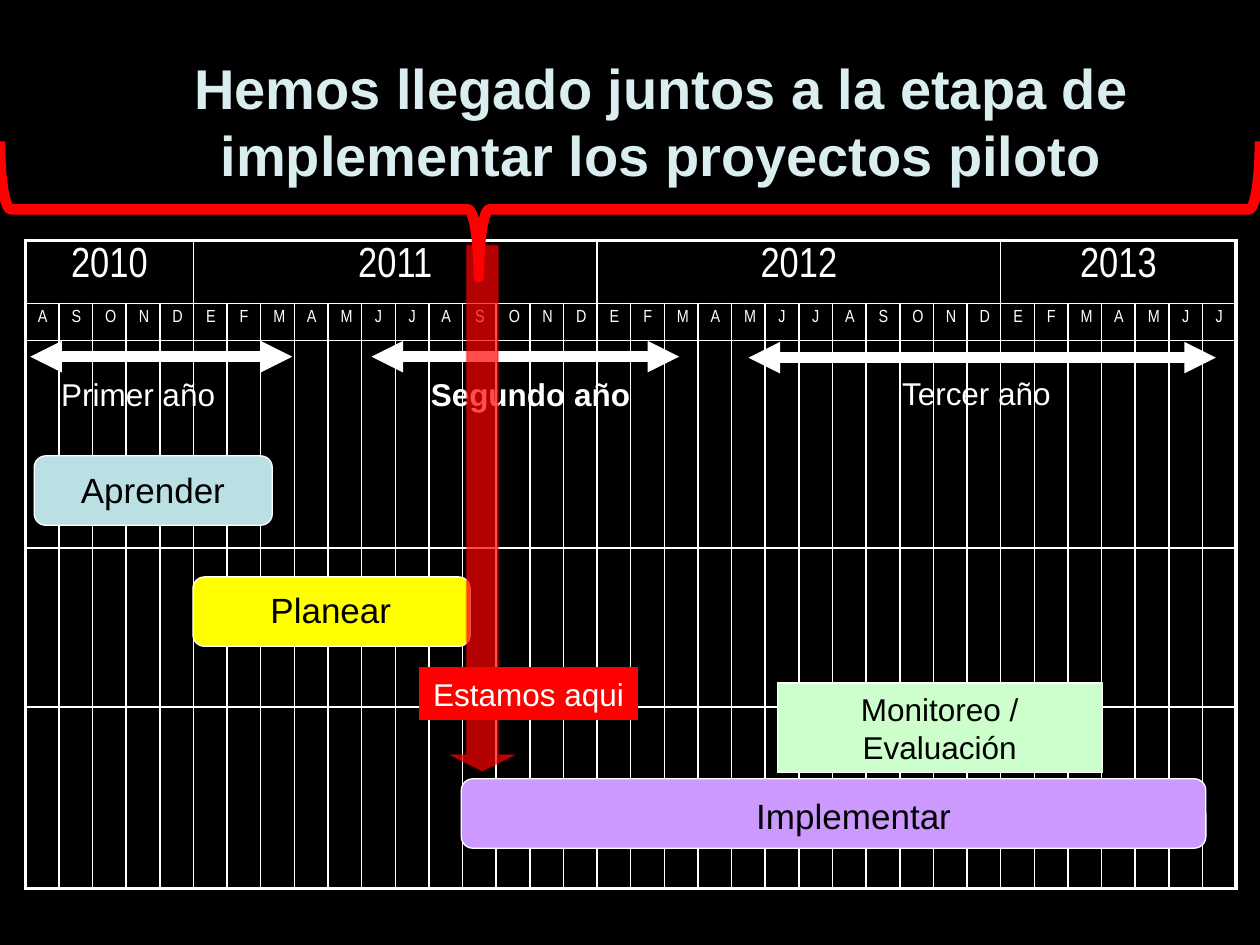
from lxml.etree import SubElement
from pptx import Presentation
from pptx.dml.color import RGBColor
from pptx.enum.shapes import MSO_CONNECTOR, MSO_SHAPE as SHAPE
from pptx.enum.text import MSO_ANCHOR as ANCHOR, PP_ALIGN
from pptx.oxml.ns import qn
from pptx.util import Cm, Pt

BLACK, WHITE, RED = "000000", "FFFFFF", "FF0000"
TITLE = "Hemos llegado juntos a la etapa de implementar los proyectos piloto"

# year, initials of the months it covers
YEARS = [
    ("2010", "ASOND"),
    ("2011", "EFMAMJJASOND"),
    ("2012", "EFMAMJJASOND"),
    ("2013", "EFMAMJJ"),
]
TABLE_LEFT, TABLE_TOP, TABLE_WIDTH = 0.51, 4.85, 24.43
ROW_HEIGHTS = [1.27, 0.74, 4.19, 3.2, 3.66]

# name, fill, bar (left, top, width), label (left, top, width)
STAGES = [
    ("Aprender", "BBE0E3", (0.69, 9.19, 4.8), (0.99, 9.32, 4.19)),
    ("Planear", "FFFF00", (3.89, 11.63, 5.59), (4.17, 11.73, 5)),
    ("Implementar", "CC99FF", (9.3, 15.7, 15.01), (9.91, 15.9, 14.6)),
]
# name, bold, arrow (start, end, height on the slide), label (left, top, width)
PHASES = [
    ("Segundo año", True, (7.49, 13.69, 7.19), (7.7, 7.44, 5.99)),
    ("Tercer año", False, (15.09, 24.51, 7.21), (16.69, 7.42, 5.99)),
    ("Primer año", False, (0.61, 5.89, 7.19), (0.69, 7.44, 4.19)),
]


def rgb(color):
    return RGBColor.from_string(color)


def write(tf, text, size, color, bold=False, font="Arial"):
    tf.word_wrap = True
    p = tf.paragraphs[0]
    p.alignment = PP_ALIGN.CENTER
    r = p.add_run()
    r.text = text
    r.font.size, r.font.bold, r.font.name = Pt(size), bold, font
    r.font.color.rgb = rgb(color)


def add_label(slide, text, left, top, width, height, size, color,
              bold=False, anchor=ANCHOR.TOP):
    sp = slide.shapes.add_textbox(Cm(left), Cm(top), Cm(width), Cm(height))
    write(sp.text_frame, text, size, color, bold)
    sp.text_frame.vertical_anchor = anchor
    return sp


def add_block(slide, kind, box, fill=None, line=WHITE, weight=0.75, adjust=()):
    sp = slide.shapes.add_shape(kind, *map(Cm, box))
    sp.shadow.inherit = False
    if fill:
        sp.fill.solid()
        sp.fill.fore_color.rgb = rgb(fill)
    else:
        sp.fill.background()
    sp.line.color.rgb = rgb(line)
    sp.line.width = Pt(weight)
    for i, value in enumerate(adjust):
        sp.adjustments[i] = value
    return sp


def set_alpha(color_format_parent, percent):
    """Make the solid colour found under the element partly transparent."""
    color = color_format_parent.find(qn("a:solidFill")).find(qn("a:srgbClr"))
    SubElement(color, qn("a:alpha"), val=str(percent * 1000))


def add_double_arrow(slide, start, end, y):
    s = slide.shapes.add_connector(
        MSO_CONNECTOR.STRAIGHT, Cm(start), Cm(y), Cm(end), Cm(y))
    s.line.color.rgb = rgb(WHITE)
    s.line.width = Pt(6)
    ln = s.line._get_or_add_ln()
    for tag in ("a:headEnd", "a:tailEnd"):
        SubElement(ln, qn(tag), type="triangle")
    SubElement(s._element.spPr, qn("a:effectLst"))


def set_borders(cell, **weights):
    tc_pr = cell._tc.get_or_add_tcPr()
    for side in "LRTB":
        ln = SubElement(tc_pr, qn(f"a:ln{side}"), w=str(Pt(weights[side])))
        SubElement(SubElement(ln, qn("a:solidFill")), qn("a:srgbClr"), val=WHITE)


def add_calendar(slide):
    months = "".join(initials for _, initials in YEARS)
    rows, cols = len(ROW_HEIGHTS), len(months)
    table = slide.shapes.add_table(
        rows, cols, Cm(TABLE_LEFT), Cm(TABLE_TOP),
        Cm(TABLE_WIDTH), Cm(sum(ROW_HEIGHTS))).table
    table.first_row = table.horz_banding = False
    for column in table.columns:
        column.width = Cm(TABLE_WIDTH / cols)
    for row, height in zip(table.rows, ROW_HEIGHTS):
        row.height = Cm(height)

    first = 0
    for year, initials in YEARS:
        cell = table.cell(0, first)
        first += len(initials)
        cell.merge(table.cell(0, first - 1))
        write(cell.text_frame, year, 24, WHITE, font="Arial Narrow")
    for c, month in enumerate(months):
        write(table.cell(1, c).text_frame, month, 10, WHITE, font="Arial Narrow")

    def weight(on_edge):
        return 2.25 if on_edge else 1

    for r in range(rows):
        for c in range(cols):
            cell = table.cell(r, c)
            if not cell.is_spanned:
                last = c + cell.span_width == cols
                set_borders(cell, L=weight(c == 0), R=weight(last),
                            T=weight(r == 0), B=weight(r == rows - 1))
            cell.fill.background()


def main():
    prs = Presentation()
    prs.slide_width, prs.slide_height = Cm(25.4), Cm(19.05)
    slide = prs.slides.add_slide(prs.slide_layouts[6])
    slide.background.fill.solid()
    slide.background.fill.fore_color.rgb = rgb(BLACK)

    title = add_label(slide, TITLE, 1.27, 0, 24.13, 3.94, 32, "DAEDEF",
                      bold=True, anchor=ANCHOR.BOTTOM)
    title.text_frame.margin_bottom = Cm(0.16)
    add_calendar(slide)

    for name, fill, bar, label in STAGES:
        add_block(slide, SHAPE.ROUNDED_RECTANGLE, (*bar, 1.4), fill)
        add_label(slide, name, *label, 1.09, 20, BLACK)
    for name, bold, arrow, label in PHASES:
        add_double_arrow(slide, *arrow)
        add_label(slide, name, *label, 1.04, 18, WHITE, bold)

    now = add_block(slide, SHAPE.DOWN_ARROW, (9.09, 4.95, 1.27, 10.59), RED,
                    line=RED, weight=1.25, adjust=(0.5, 0.25))
    set_alpha(now._element.spPr, 70)
    set_alpha(now.line._get_or_add_ln(), 33)
    here = add_block(slide, SHAPE.RECTANGLE, (8.46, 13.46, 4.39, 1.04), RED, line=RED)
    write(here.text_frame, "Estamos aqui", 18, WHITE)

    brace = add_block(slide, SHAPE.RIGHT_BRACE, (11.33, -8.48, 2.74, 25.4),
                      line=RED, weight=6, adjust=(0.08, 0.38))
    brace.rotation = 270
    brace._element.spPr.find(qn("a:xfrm")).set("flipH", "1")

    review = add_block(slide, SHAPE.RECTANGLE, (15.67, 13.77, 6.55, 1.8), "CCFFCC")
    write(review.text_frame, "Monitoreo / Evaluación", 18, BLACK)

    prs.save("out.pptx")


if __name__ == "__main__":
    main()
